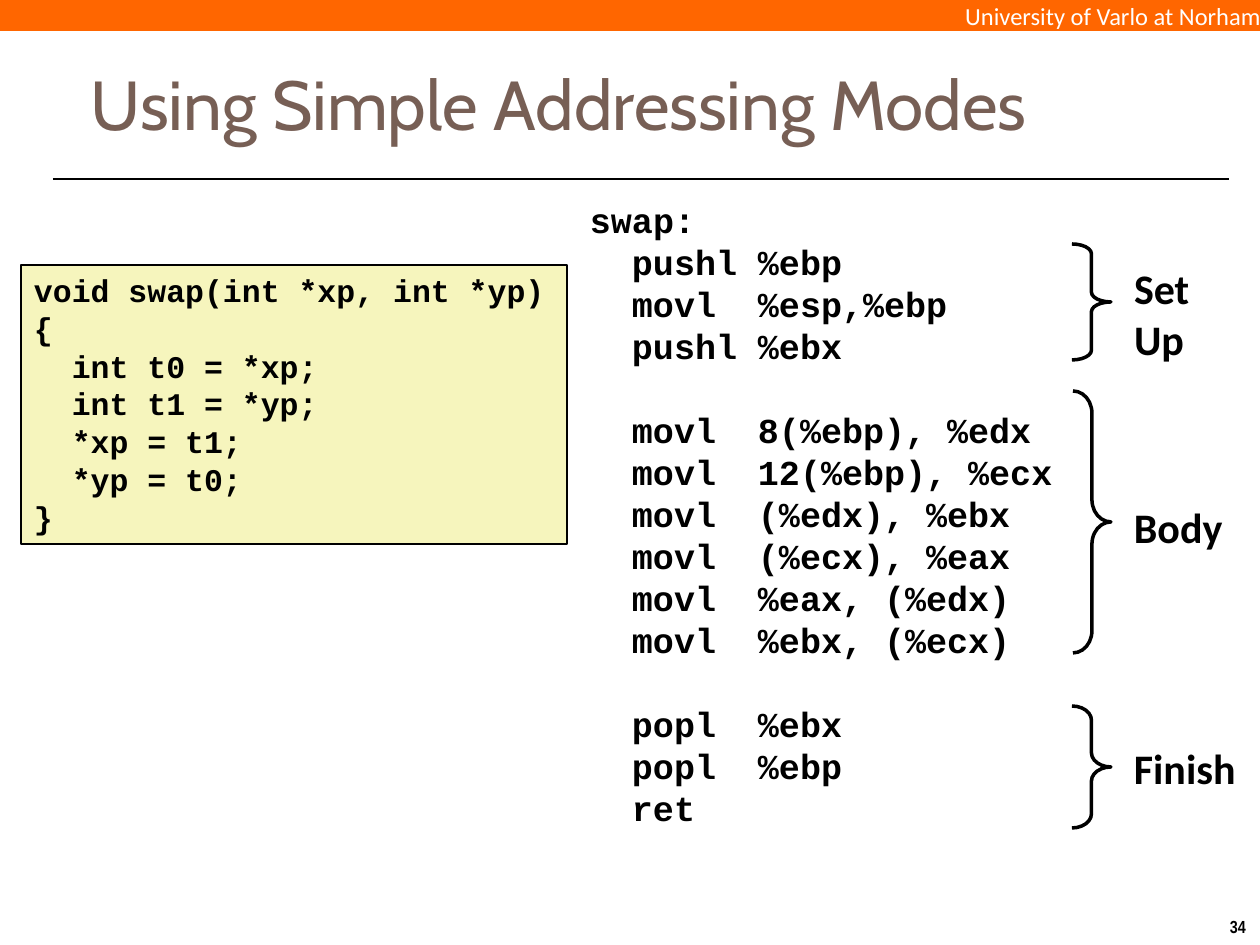
from dataclasses import dataclass

from lxml import etree
from pptx import Presentation
from pptx.dml.color import RGBColor
from pptx.enum.shapes import MSO_CONNECTOR, MSO_SHAPE
from pptx.enum.text import MSO_ANCHOR, PP_ALIGN
from pptx.oxml.ns import qn
from pptx.util import Pt

TITLE_ONLY = 5
RECTANGLE, BRACE = MSO_SHAPE.RECTANGLE, MSO_SHAPE.RIGHT_BRACE
STRAIGHT = MSO_CONNECTOR.STRAIGHT
TOP, MIDDLE = MSO_ANCHOR.TOP, MSO_ANCHOR.MIDDLE
LEFT, RIGHT = PP_ALIGN.LEFT, PP_ALIGN.RIGHT

TITLE = "Using Simple Addressing Modes"
HEADER = "University of Varlo at Norham"
PAGE_NUMBER = "34"
C_CODE = [
    "void swap(int *xp, int *yp)",
    "{",
    "\tint t0 = *xp;",
    "\tint t1 = *yp;",
    "\t*xp = t1;",
    "\t*yp = t0;",
    "}",
]
# Each inner list is a block; one empty line's height separates the blocks.
ASSEMBLY = [
    ["swap:", "\tpushl\t%ebp", "\tmovl\t%esp,%ebp", "\tpushl\t%ebx"],
    ["\tmovl\t8(%ebp), %edx", "\tmovl\t12(%ebp), %ecx", "\tmovl\t(%edx), %ebx",
     "\tmovl\t(%ecx), %eax", "\tmovl\t%eax, (%edx)", "\tmovl\t%ebx, (%ecx)"],
    ["\tpopl\t%ebx", "\tpopl\t%ebp", "\tret"],
]
# label lines, brace box, brace curve, label box (px)
PHASES = [
    (["Set", "Up"], (1072, 244, 39, 116), 0.25, (1121, 257, 82, 115)),
    (["Body"], (1073, 391, 38, 262), 0.585, (1121, 496, 115, 63)),
    (["Finish"], (1072, 706, 39, 122), 0.362, (1121, 737, 129, 63)),
]


@dataclass(frozen=True)
class Theme:
    ink: str = "000000"
    title: str = "775F55"
    band: str = "FF6600"
    band_text: str = "FFFFFF"
    code_fill: str = "F6F5BD"
    title_font: str = "Cabin"
    label_font: str = "Calibri"
    code_font: str = "Courier New"
    number_font: str = "Arial Narrow"
    title_size: float = 39.6
    label_size: int = 24
    assembly_size: int = 20
    c_size: int = 18
    header_size: int = 14
    number_size: int = 10


THEME = Theme()
PX_PER_INCH = 126
CODE_LEADING = 1.2
CODE_ADVANCE = 0.6


def px(length):
    return round(length * 914400 / PX_PER_INCH)


def place(shape, box):
    shape.left, shape.top, shape.width, shape.height = map(px, box)


def write(shape, lines, *, font, size, color=THEME.ink, bold=False, align=LEFT,
          anchor=TOP, wrap=True, inset=(13, 6), leading=None, gaps=(), tabs=()):
    """Fill a shape with paragraphs; gaps holds the lines preceded by a line's space."""
    frame = shape.text_frame
    frame.word_wrap = wrap
    frame.vertical_anchor = anchor
    frame.margin_left = frame.margin_right = px(inset[0])
    frame.margin_top = frame.margin_bottom = px(inset[1])
    for index, line in enumerate(lines):
        paragraph = frame.paragraphs[0] if index == 0 else frame.add_paragraph()
        paragraph.alignment = align
        if leading:
            paragraph.line_spacing = Pt(leading)
        if index in gaps:
            paragraph.space_before = Pt(leading)
        if tabs:
            tab_list = etree.SubElement(paragraph._p.get_or_add_pPr(), qn("a:tabLst"))
            for position in tabs:
                etree.SubElement(tab_list, qn("a:tab"), pos=str(position), algn="l")
        run = paragraph.add_run()
        run.text = line
        run.font.name, run.font.size, run.font.bold = font, Pt(size), bold
        run.font.color.rgb = RGBColor.from_string(color)


def write_code(shape, lines, size, tab_columns, gaps=()):
    tabs = [Pt(column * size * CODE_ADVANCE) for column in tab_columns]
    write(shape, lines, font=THEME.code_font, size=size, bold=True,
          leading=size * CODE_LEADING, gaps=gaps, tabs=tabs)


def add_text(slide, box, lines, **text_format):
    shape = slide.shapes.add_textbox(*map(px, box))
    write(shape, lines, **text_format)


def add_shape(slide, kind, box, fill=None, line=None, line_width=1):
    shape = slide.shapes.add_shape(kind, *map(px, box))
    shape.shadow.inherit = False
    if fill:
        shape.fill.solid()
        shape.fill.fore_color.rgb = RGBColor.from_string(fill)
    else:
        shape.fill.background()
    if line:
        shape.line.color.rgb = RGBColor.from_string(line)
        shape.line.width = Pt(line_width)
    else:
        shape.line.fill.background()
    return shape


def add_rule(slide, left, right, top):
    rule = slide.shapes.add_connector(STRAIGHT, px(left), px(top), px(right), px(top))
    rule.line.color.rgb = RGBColor.from_string(THEME.ink)
    rule.line.width = Pt(1.5)
    etree.SubElement(rule._element.spPr, qn("a:effectLst"))


def main():
    presentation = Presentation()
    presentation.slide_width, presentation.slide_height = px(1260), px(945)
    slide = presentation.slides.add_slide(presentation.slide_layouts[TITLE_ONLY])

    header = add_shape(slide, RECTANGLE, (0, 0, 1261, 31), fill=THEME.band)
    write(header, [HEADER], font=THEME.label_font, size=THEME.header_size,
          color=THEME.band_text, align=RIGHT, anchor=MIDDLE, inset=(0, 0))
    add_rule(slide, 53, 1229, 179)
    add_text(slide, (1217, 910, 43, 34), [PAGE_NUMBER], font=THEME.number_font,
             size=THEME.number_size, bold=True, wrap=False)

    title = slide.shapes.title
    place(title, (78, 63, 1056, 79))
    write(title, [TITLE], font=THEME.title_font, size=THEME.title_size,
          color=THEME.title, anchor=MIDDLE)

    c_box = add_shape(slide, RECTANGLE, (21, 265, 546, 279),
                      fill=THEME.code_fill, line=THEME.ink)
    write_code(c_box, C_CODE, THEME.c_size, [2])

    for label, brace_box, curve, label_box in PHASES:
        brace = add_shape(slide, BRACE, brace_box, line=THEME.ink, line_width=2)
        brace.adjustments[0] = curve
        add_text(slide, label_box, label, font=THEME.label_font,
                 size=THEME.label_size, bold=True, wrap=False)

    lines = [line for block in ASSEMBLY for line in block]
    block_starts = [sum(map(len, ASSEMBLY[:index])) for index in range(1, len(ASSEMBLY))]
    listing = slide.shapes.add_textbox(*map(px, (577, 192, 577, 649)))
    write_code(listing, lines, THEME.assembly_size, [2, 8], block_starts)

    presentation.save("out.pptx")


if __name__ == "__main__":
    main()
